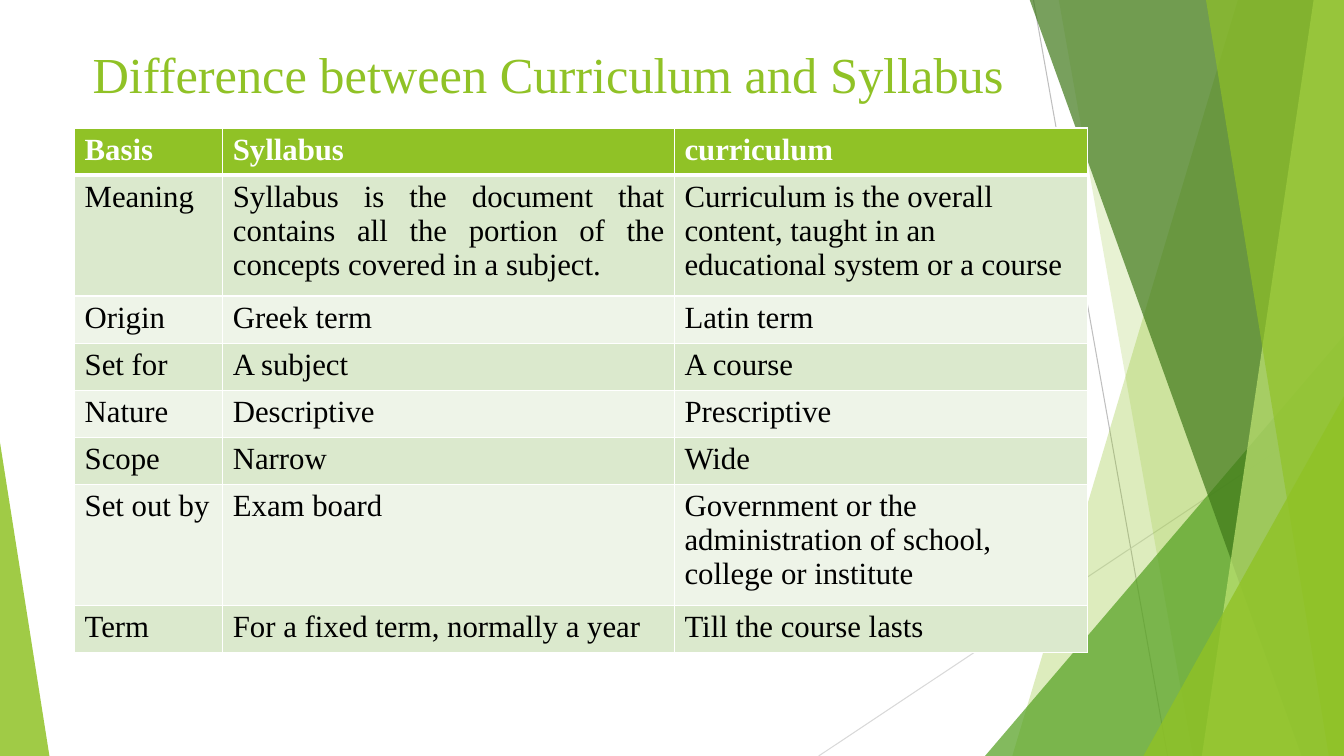
from dataclasses import dataclass
from lxml.etree import SubElement
from pptx import Presentation
from pptx.dml.color import RGBColor
from pptx.enum.shapes import MSO_CONNECTOR, MSO_SHAPE
from pptx.enum.text import MSO_ANCHOR, PP_ALIGN
from pptx.oxml.ns import qn
from pptx.util import Inches, Pt


@dataclass(frozen=True)
class Theme:
    font: str = "Times New Roman"
    title: int = 36
    body: int = 22
    lime: str = "90C226"
    green: str = "54A021"
    forest: str = "3F7819"
    pale: str = "C0E474"
    white: str = "FFFFFF"
    black: str = "000000"
    bands: tuple = ("DBE9CD", "EEF4E8")
    grays: tuple = ("BFBFBF", "D9D9D9")


WIDE, HIGH = 13.33, 7.5


class Deck:
    def __init__(self, theme):
        self.theme = theme
        self.file = Presentation()
        self.file.slide_width = Inches(WIDE)
        self.file.slide_height = Inches(HIGH)
        self.slide = self.file.slides.add_slide(self.file.slide_layouts[6])
        self.shapes = self.slide.shapes

    def paint(self, shape, color, alpha):
        """Fill a shape with a see-through colour; alpha is in percent."""
        shape.shadow.inherit = False
        shape.fill.solid()
        shape.fill.fore_color.rgb = RGBColor.from_string(color)
        tint = shape._element.spPr.find(qn("a:solidFill"))[0]
        SubElement(tint, qn("a:alpha"), val=str(alpha * 1000))
        shape.line.fill.background()

    def line(self, start, end, color):
        ends = [Inches(n) for n in (*start, *end)]
        line = self.shapes.add_connector(MSO_CONNECTOR.STRAIGHT, *ends)
        line.line.color.rgb = RGBColor.from_string(color)
        line.line.width = Pt(0.75)
        SubElement(line._element.spPr, qn("a:effectLst"))

    def blade(self, top, foot, color, alpha):
        """Area between a slanted edge and the right side of the slide."""
        rise = -0.01
        spots = [(WIDE, rise), (WIDE, HIGH), (foot, HIGH)]
        edge = self.shapes.build_freeform(Inches(top), Inches(rise))
        edge.add_line_segments([(Inches(x), Inches(y)) for x, y in spots])
        self.paint(edge.convert_to_shape(), color, alpha)

    def wedge(self, left, top, width, apex, color, alpha):
        """Triangle that stands on the bottom of the slide."""
        box = [Inches(n) for n in (left, top, width, HIGH - top)]
        shape = self.shapes.add_shape(MSO_SHAPE.ISOSCELES_TRIANGLE, *box)
        shape.adjustments[0] = apex
        self.paint(shape, color, alpha)

    def label(self, frame, text, size, color, align=PP_ALIGN.LEFT, bold=False):
        frame.text = text
        para = frame.paragraphs[0]
        para.alignment = align
        font = para.runs[0].font
        font.name, font.size, font.bold = self.theme.font, Pt(size), bold
        font.color.rgb = RGBColor.from_string(color)

    def title(self, text, box):
        frame = self.shapes.add_textbox(*[Inches(n) for n in box]).text_frame
        frame.word_wrap = True
        frame.vertical_anchor = MSO_ANCHOR.MIDDLE
        self.label(frame, text, self.theme.title, self.theme.lime, PP_ALIGN.CENTER)

    def edge(self, cell, sides):
        """Draw white borders; sides maps a side to its width in points."""
        props = cell._tc.get_or_add_tcPr()
        for side, width in sides.items():
            rule = SubElement(props, qn(f"a:ln{side}"), w=str(Pt(width)))
            fill = SubElement(rule, qn("a:solidFill"))
            SubElement(fill, qn("a:srgbClr"), val=self.theme.white)

    def table(self, data, box, widths, height):
        look = self.theme
        place = [Inches(n) for n in box]
        grid = self.shapes.add_table(len(data), len(widths), *place).table
        for col, width in zip(grid.columns, widths):
            col.width = Inches(width)
        for i, texts in enumerate(data):
            grid.rows[i].height = Inches(height)
            head = i == 0
            back = look.lime if head else look.bands[(i - 1) % 2]
            ink = look.white if head else look.black
            for j, text in enumerate(texts):
                cell = grid.cell(i, j)
                align = PP_ALIGN.JUSTIFY if (i, j) == (1, 1) else PP_ALIGN.LEFT
                self.label(cell.text_frame, text, look.body, ink, align, head)
                self.edge(cell, {"L": 1, "R": 1, "T": 3 if i == 1 else 1,
                                 "B": 3 if head else 1})
                cell.fill.solid()
                cell.fill.fore_color.rgb = RGBColor.from_string(back)


ROWS = [
    ("Basis", "Syllabus", "curriculum"),
    ("Meaning",
     "Syllabus is the document that contains all the portion of the "
     "concepts covered in a subject.",
     "Curriculum is the overall content, taught in an educational system "
     "or a course"),
    ("Origin", "Greek term", "Latin term"),
    ("Set for", "A subject", "A course"),
    ("Nature", "Descriptive", "Prescriptive"),
    ("Scope", "Narrow", "Wide"),
    ("Set out by", "Exam board",
     "Government or the administration of school, college or institute"),
    ("Term", "For a fixed term, normally a year", "Till the course lasts"),
]


def main():
    look = Theme()
    deck = Deck(look)

    # Thin lines behind the facets
    deck.line((10.25, 0), (11.58, HIGH), look.grays[0])
    deck.line((WIDE, 4.03), (8.12, HIGH), look.grays[1])

    # Green facets, back to front
    deck.blade(12.28, 10.04, look.lime, 30)
    deck.blade(10.5, 11.83, look.lime, 20)
    deck.wedge(9.77, 3.33, 3.56, 1, look.green, 72)
    deck.blade(10.21, 12.91, look.forest, 70)
    deck.blade(13.03, 11.92, look.pale, 70)
    deck.blade(11.96, 13.18, look.lime, 65)
    deck.wedge(11.34, 3.93, 1.99, 1, look.lime, 80)
    deck.wedge(0, 4.39, 0.49, 0, look.lime, 85)

    # Title and comparison table
    deck.title("Difference between Curriculum and Syllabus", (0.74, 0.32, 9.4, 0.81))
    deck.table(ROWS, (0.74, 1.27, 10.05, 5.2), (1.47, 4.48, 4.1), 0.41)

    deck.file.save("out.pptx")


if __name__ == "__main__":
    main()
